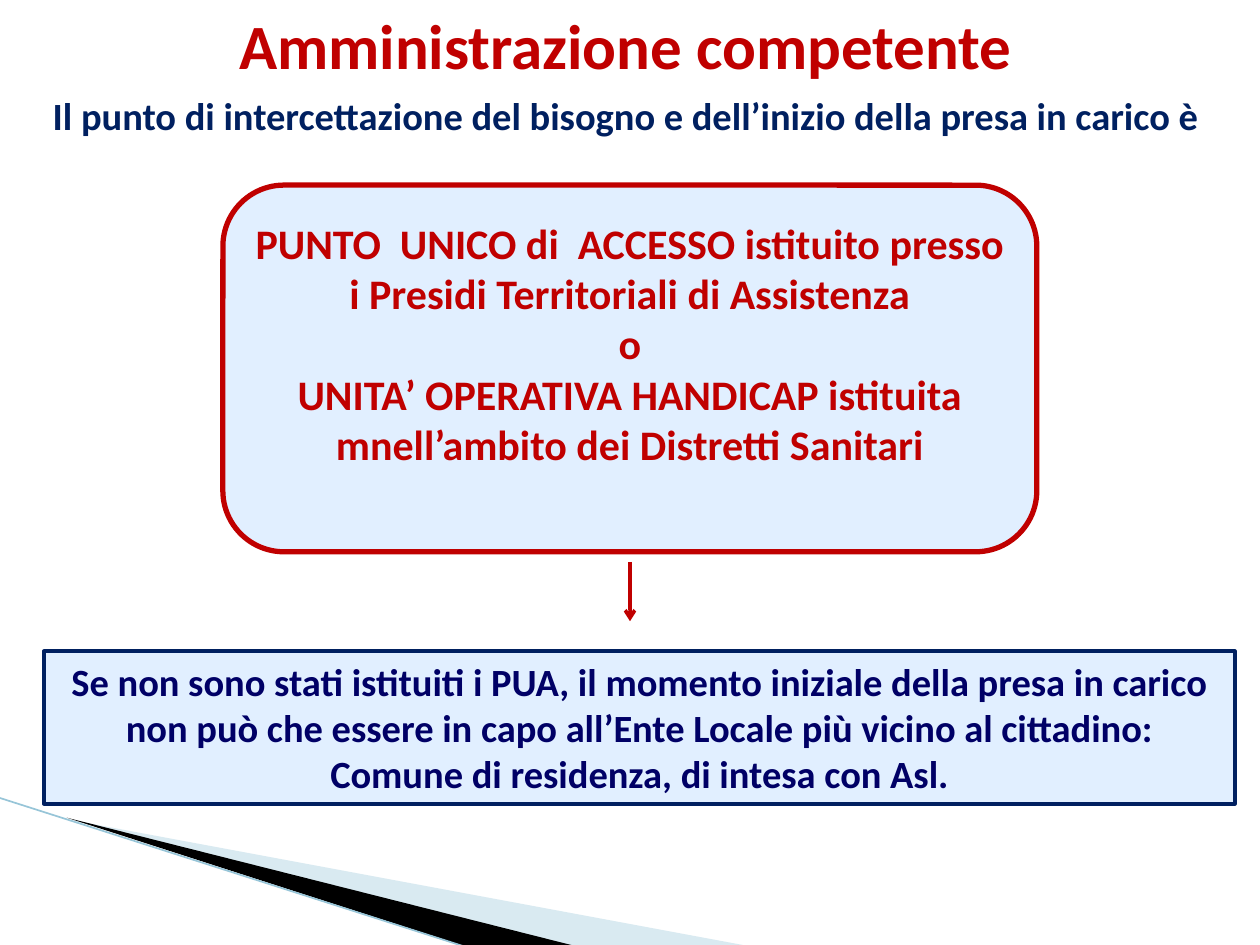
from lxml import etree
from pptx import Presentation
from pptx.enum import shapes, text
from pptx.oxml import ns
from pptx.dml.color import RGBColor
from pptx.util import Pt

COLORS = {
    "red": "C00000", "navy": "002060", "ink": "000066", "panel": "E1EFFF",
    "pale": "A0CBDC", "black": "000000", "edge": "97C5D8",
}


class SlideBuilder:
    font = "Calibri"

    def __init__(self, slide):
        self.slide = slide

    def color(self, name):
        return RGBColor.from_string(COLORS[name])

    def set_text(self, shape, paragraphs, size, color, anchor=text.MSO_ANCHOR.TOP, grow=True):
        frame = shape.text_frame
        frame.word_wrap = True
        frame.vertical_anchor = anchor
        frame.auto_size = (text.MSO_AUTO_SIZE.SHAPE_TO_FIT_TEXT if grow
                           else text.MSO_AUTO_SIZE.NONE)
        for index, words in enumerate(paragraphs):
            paragraph = frame.add_paragraph() if index else frame.paragraphs[0]
            paragraph.alignment = text.PP_ALIGN.CENTER
            run = paragraph.add_run()
            run.text = words
            run.font.name = self.font
            run.font.size = Pt(size)
            run.font.bold = True
            run.font.color.rgb = self.color(color)

    def title(self, box, words, size, color):
        heading = self.slide.shapes.title
        heading.left, heading.top, heading.width, heading.height = map(Pt, box)
        self.set_text(heading, [words], size, color)

    def label(self, box, words, size, color):
        self.set_text(self.slide.shapes.add_textbox(*map(Pt, box)), [words], size, color)

    def panel(self, kind, box, border, width):
        panel = self.slide.shapes.add_shape(kind, *map(Pt, box))
        panel.shadow.inherit = False
        panel.fill.solid()
        panel.fill.fore_color.rgb = self.color("panel")
        panel.line.color.rgb = self.color(border)
        panel.line.width = Pt(width)
        return panel

    def wedge(self, points, color, opacity=100):
        start, *rest = [(Pt(x), Pt(y)) for x, y in points]
        outline = self.slide.shapes.build_freeform(*start, scale=1.0)
        outline.add_line_segments(rest, close=True)
        wedge = outline.convert_to_shape()
        wedge.shadow.inherit = False
        wedge.fill.solid()
        wedge.fill.fore_color.rgb = self.color(color)
        wedge.line.fill.background()
        if opacity < 100:
            rgb = wedge._element.spPr.find(".//" + ns.qn("a:srgbClr"))
            etree.SubElement(rgb, ns.qn("a:alpha"), val=str(opacity * 1000))

    def line(self, ends, color, width, arrow=False):
        line = self.slide.shapes.add_connector(
            shapes.MSO_CONNECTOR.STRAIGHT, *map(Pt, ends))
        line.line.color.rgb = self.color(color)
        line.line.width = Pt(width)
        properties = line._element.spPr
        if arrow:
            etree.SubElement(properties.find(ns.qn("a:ln")), ns.qn("a:tailEnd"), type="arrow")
        etree.SubElement(properties, ns.qn("a:effectLst"))


def main():
    deck = Presentation()
    deck.slide_width, deck.slide_height = Pt(720), Pt(540)
    builder = SlideBuilder(deck.slides.add_slide(deck.slide_layouts[5]))

    # Corner decoration
    builder.wedge([(39.6, 468.4), (428.4, 540.7), (328.3, 540.7)], "pale", 40)
    builder.wedge([(38.2, 467.3), (329, 540.7), (267.8, 541.4)], "black")
    builder.line((-0.7, 455.8, 267.1, 541.4), "edge", 0.95)

    # Fallback when no access point exists
    fallback = builder.panel(shapes.MSO_SHAPE.RECTANGLE, (25.2, 372.2, 680.4, 87.1), "navy", 2.25)
    builder.set_text(fallback, [
        "Se non sono stati istituiti i PUA, il momento iniziale della presa in carico "
        "non può che essere in capo all’Ente Locale più vicino al cittadino: "
        "Comune di residenza, di intesa con Asl."], 22, "ink")

    # Headings
    builder.title((65.5, 0, 583.9, 51.1), "Amministrazione competente", 36, "red")
    builder.label((20.2, 49, 674.6, 33.8),
                  "Il punto di intercettazione del bisogno e dell’inizio della presa in carico è",
                  22, "navy")

    # Access point, its text raised by half a line
    access = builder.panel(shapes.MSO_SHAPE.ROUNDED_RECTANGLE, (127.4, 105.8, 465.1, 209.5), "red", 3)
    access.text_frame.margin_bottom = Pt(32.4)
    builder.set_text(access, [
        "PUNTO  UNICO di  ACCESSO istituito presso i Presidi Territoriali di Assistenza",
        "o",
        "UNITA’ OPERATIVA HANDICAP istituita mnell’ambito dei Distretti Sanitari",
    ], 24, "red", text.MSO_ANCHOR.MIDDLE, grow=False)

    # Arrow down to the fallback
    builder.line((360, 321.1, 360, 355), "red", 2, arrow=True)

    deck.save("out.pptx")


if __name__ == "__main__":
    main()
